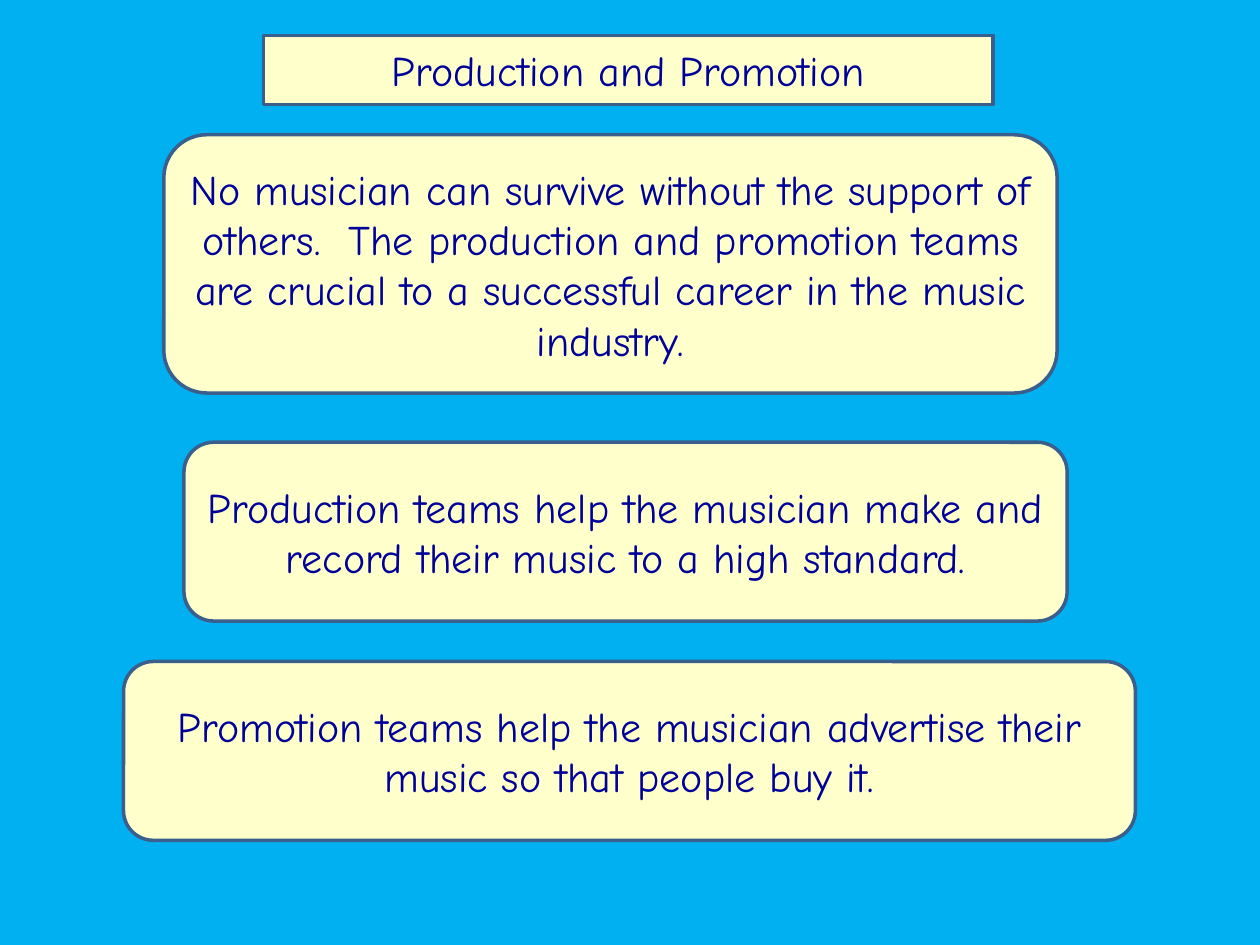
import pptx
import pptx.util
import pptx.dml.color
import pptx.enum.shapes
import pptx.enum.text
import pptx.oxml
import pptx.oxml.ns

Pt = pptx.util.Pt
FONT = "Comic Neue"
COLORS = {"back": "00B0F0", "box": "FFFFCC", "edge": "3A5F8C", "text": "000099"}

# Text, then left, top, width and height in points
TITLE = ("Production and Promotion", (150.5, 20.2, 417, 39.6))
BOXES = [
    ("No musician can survive without the support of others.  "
     "The production and promotion teams are crucial to a successful "
     "career in the music industry.", (93.6, 77, 510.5, 147.6)),
    ("Production teams help the musician make and record their music "
     "to a high standard.", (105.1, 252.7, 504.7, 102.2)),
    ("Promotion teams help the musician advertise their music so that "
     "people buy it.", (70.6, 378, 578.2, 102.2)),
]


def paint(fill, name):
    fill.solid()
    fill.fore_color.rgb = pptx.dml.color.RGBColor.from_string(COLORS[name])


def style(shape, text):
    paint(shape.fill, "box")
    paint(shape.line.fill, "edge")
    shape.line.width = Pt(2)
    frame = shape.text_frame
    frame.text = text
    frame.word_wrap = True
    frame.auto_size = pptx.enum.text.MSO_AUTO_SIZE.NONE
    frame.vertical_anchor = pptx.enum.text.MSO_ANCHOR.MIDDLE
    para = frame.paragraphs[0]
    para.alignment = pptx.enum.text.PP_ALIGN.CENTER
    font = para.runs[0].font
    font.name = FONT
    font.size = Pt(24)
    paint(font.fill, "text")


def add_title(slide):
    """Give the title placeholder the rounded outline of the boxes."""
    text, place = TITLE
    title = slide.shapes.title
    title.left, title.top, title.width, title.height = map(Pt, place)
    title.element.spPr.append(pptx.oxml.parse_xml(
        f'<a:prstGeom {pptx.oxml.ns.nsdecls("a")} prst="roundRect">'
        '<a:avLst/></a:prstGeom>'))
    style(title, text)


def main():
    deck = pptx.Presentation()
    deck.slide_width, deck.slide_height = Pt(720), Pt(540)
    slide = deck.slides.add_slide(deck.slide_layouts[5])
    paint(slide.background.fill, "back")
    add_title(slide)
    for text, place in BOXES:
        box = slide.shapes.add_shape(
            pptx.enum.shapes.MSO_SHAPE.ROUNDED_RECTANGLE, *map(Pt, place))
        box.shadow.inherit = False
        style(box, text)
    deck.save("out.pptx")


if __name__ == "__main__":
    main()
